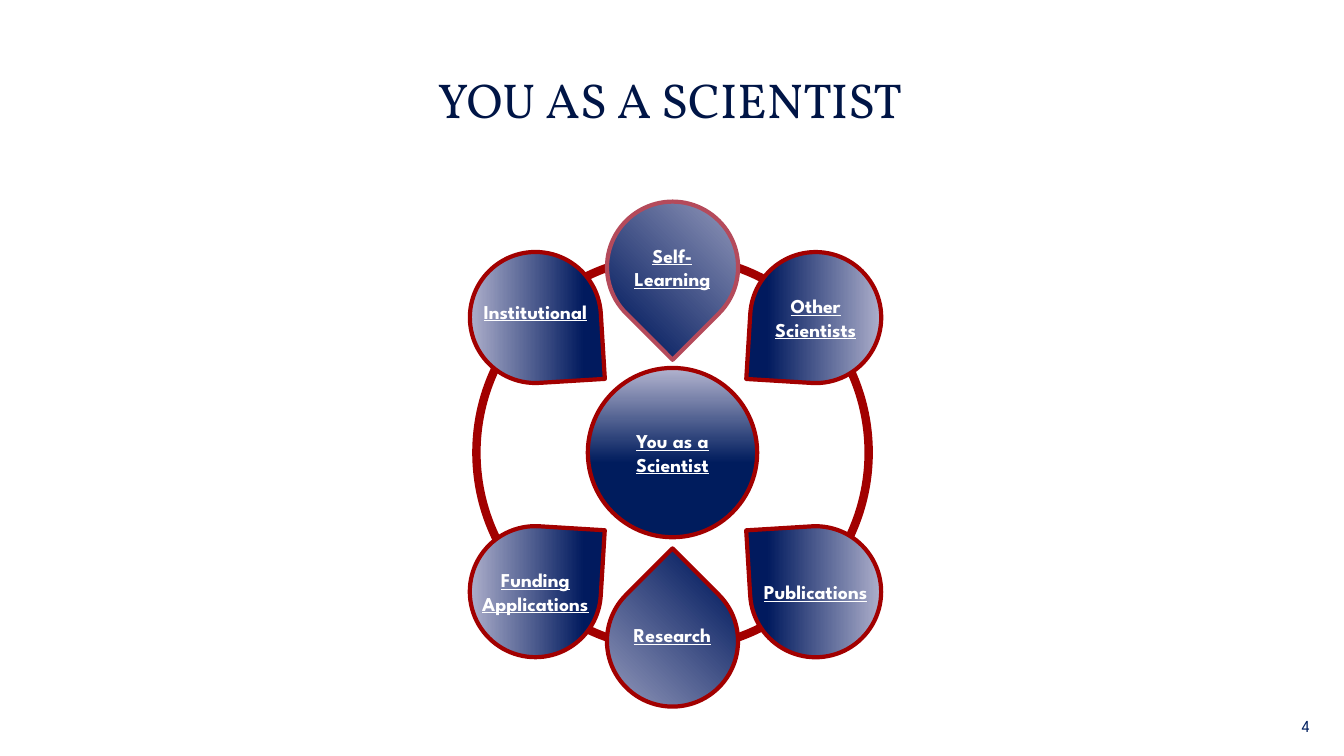
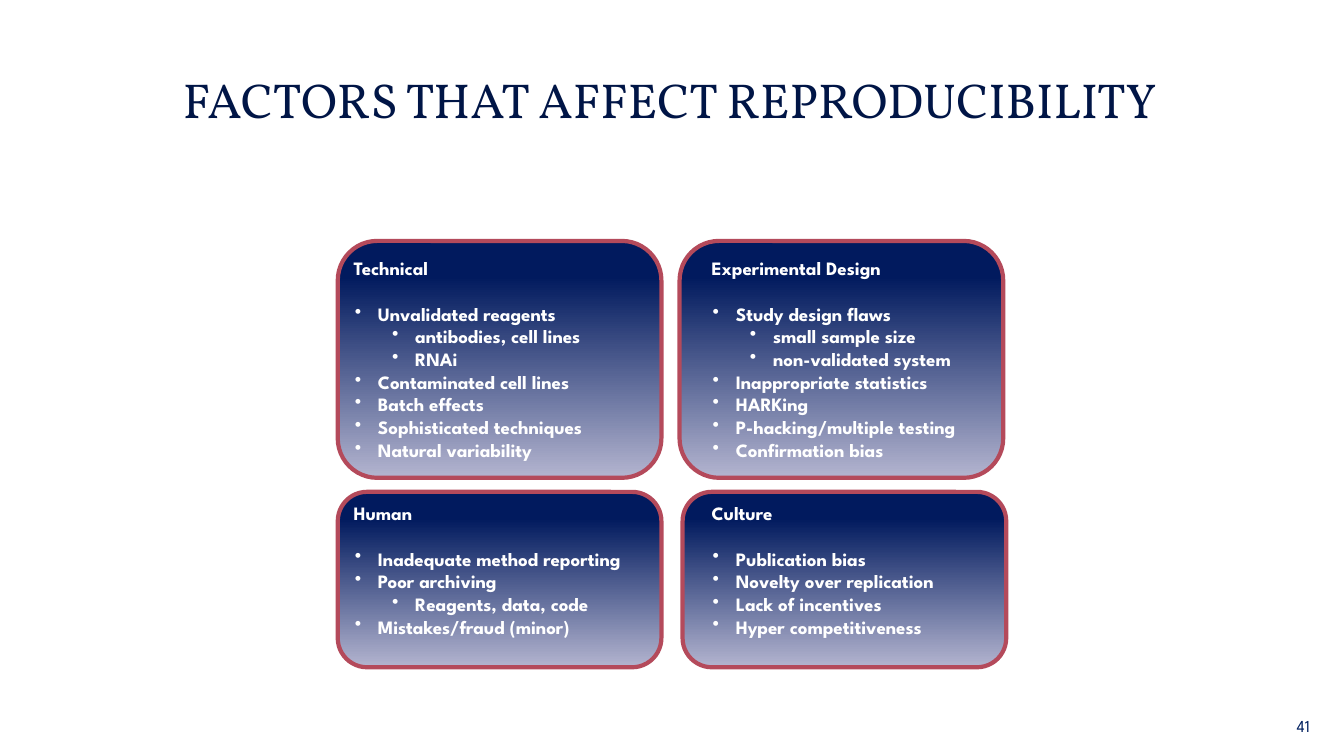
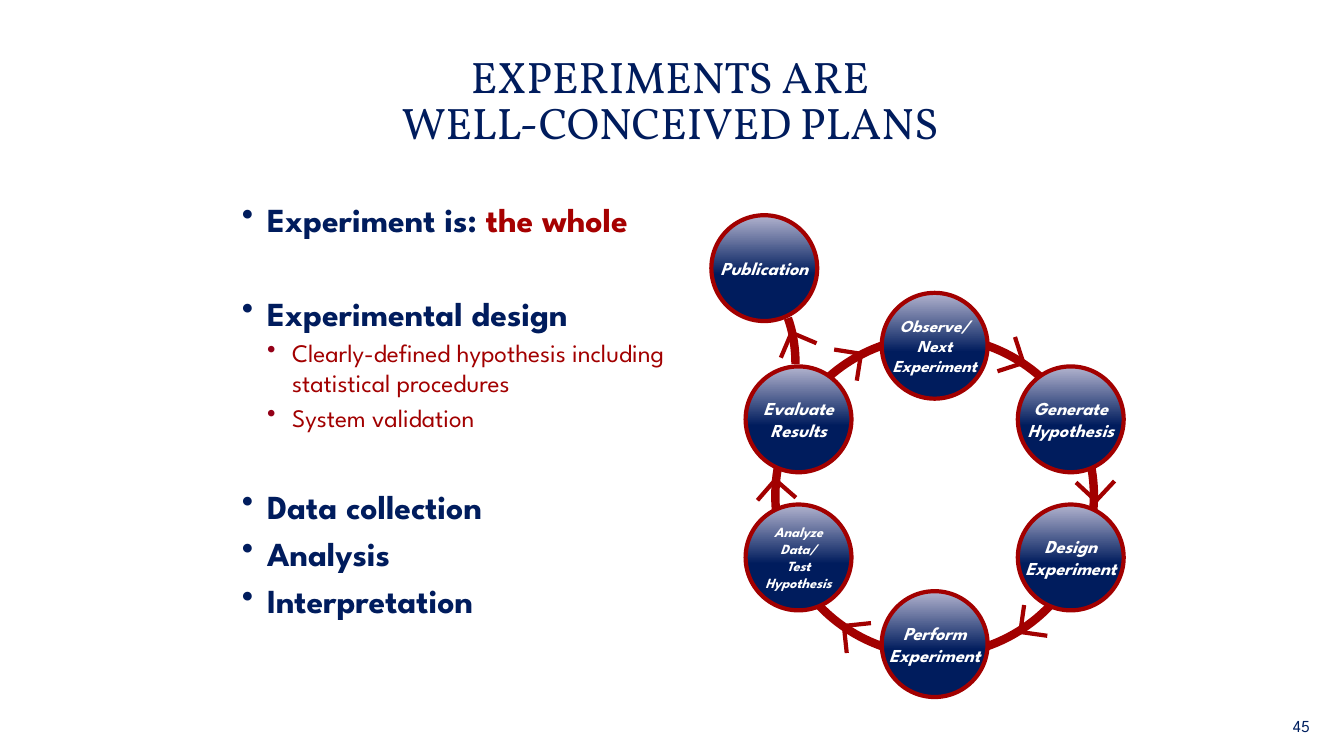
from math import cos, radians, sin

from lxml import etree
from pptx import Presentation
from pptx import util as u
from pptx.dml.color import RGBColor
from pptx.enum import shapes, text
from pptx.oxml.ns import qn

# Shared style
WIDE, HIGH = 13.33, 7.5
SANS, SERIF = "League Spartan", "Vollkorn"
WHITE = RGBColor(0xFF, 0xFF, 0xFF)
NAVY = RGBColor(0x00, 0x1C, 0x5D)
DEEP = RGBColor(0x01, 0x1A, 0x5E)
INK = RGBColor(0x00, 0x15, 0x46)
FOOT = RGBColor(0x00, 0x20, 0x60)
PALE = RGBColor(0xB3, 0xB4, 0xCF)
RED = RGBColor(0xA2, 0x00, 0x00)
BRICK = RGBColor(0xA6, 0x00, 0x00)
ROSE = RGBColor(0xB4, 0x4A, 0x5B)
WINE = RGBColor(0x94, 0x00, 0x18)
KIND = shapes.MSO_AUTO_SHAPE_TYPE
ALIGN = text.PP_ALIGN
MID = text.MSO_ANCHOR.MIDDLE

# Slide 1: label, centre, turn, gradient direction, line colour, label shift
HUB = (6.67, 4.49)
LEFT, RIGHT, UPPER, LOWER = 5.31, 8.09, 3.15, 5.87
DROPS = [
    ("Research", HUB[0], 6.36, 315, 135, RED, -0.06),
    ("Self-\nLearning", HUB[0], 2.65, 135, 315, ROSE, 0),
    ("Institutional", LEFT, UPPER, 86.5, 180, RED, -0.06),
    ("Other\nScientists", RIGHT, UPPER, 183.5, 0, RED, 0),
    ("Publications", RIGHT, LOWER, 266.5, 0, RED, 0),
    ("Funding\nApplications", LEFT, LOWER, 3.5, 180, RED, 0),
]

# Slide 2: panel left, row, text left, heading, (level, line)
ROWS = [(2.39, 2.35, 2.5), (4.88, 1.74, 4.93)]
PANELS = [
    (3.35, 1, 3.41, "Human", [
        (0, "Inadequate method reporting"), (0, "Poor archiving"),
        (1, "Reagents, data, code"), (0, "Mistakes/fraud (minor)")]),
    (6.77, 1, 6.96, "Culture", [
        (0, "Publication bias"), (0, "Novelty over replication"),
        (0, "Lack of incentives"), (0, "Hyper competitiveness")]),
    (3.35, 0, 3.41, "Technical", [
        (0, "Unvalidated reagents"), (1, "antibodies, cell lines"),
        (1, "RNAi"), (0, "Contaminated cell lines"), (0, "Batch effects"),
        (0, "Sophisticated techniques"), (0, "Natural variability")]),
    (6.74, 0, 6.96, "Experimental Design", [
        (0, "Study design flaws"), (1, "small sample size"),
        (1, "non-validated system"), (0, "Inappropriate statistics"),
        (0, "HARKing"), (0, "P-hacking/multiple testing"),
        (0, "Confirmation bias")]),
]

# Slide 3: level, space before, line (a bar starts the red part)
POINTS = [
    (0, 0, "Experiment is: |the whole"),
    (0, 38.4, "Experimental design"),
    (1, 3, "Clearly-defined hypothesis including statistical procedures"),
    (1, 3, "System validation"),
    (0, 38.4, "Data collection"),
    (0, 4.8, "Analysis"),
    (0, 4.8, "Interpretation"),
]
LOOP = (9.27, 4.92)
STEP = 1.35
NODES = [
    ("Observe/\nNext\nExperiment", LOOP[0], 3.43, 12),
    ("Perform\nExperiment", LOOP[0], 6.39, 13),
    ("Design\nExperiment", LOOP[0] + STEP, 5.53, 13),
    ("Analyze\nData/\nTest\nHypothesis", LOOP[0] - STEP, 5.53, 10),
    ("Generate\nHypothesis", LOOP[0] + STEP, 4.16, 13),
    ("Evaluate\nResults", LOOP[0] - STEP, 4.16, 13),
    ("Publication", 7.58, 2.66, 13),
]
# Arrow tips on the loop: x, y, heading in degrees clockwise
TIPS = [(10.15, 3.6, 27), (10.87, 4.97, 88), (7.69, 4.76, 266),
        (8.54, 3.51, 324), (8.37, 6.21, 219), (10.12, 6.27, 143),
        (7.85, 3.3, 248)]
ARM = 0.27


def style(par, size, color, font=SANS, bold=False, under=False, slant=False):
    for run in par.runs:
        face = run.font
        face.size, face.name, face.bold = u.Pt(size), font, bold
        face.color.rgb = color
        if under:
            face.underline = True
        if slant:
            face.italic = True


def write(slide, box, words, align, anchor=MID, wrap=True, **look):
    """Add a text box; each line of words is a paragraph."""
    frame = slide.shapes.add_textbox(*map(u.Inches, box)).text_frame
    frame.word_wrap = wrap
    frame.vertical_anchor = anchor
    frame.text = words
    for par in frame.paragraphs:
        par.alignment = align
        style(par, **look)
    return frame


def label(slide, x, y, words, size, **look):
    write(slide, (x - 0.7, y - 0.4, 1.4, 0.8), words, ALIGN.CENTER,
          wrap=False, size=size, color=WHITE, bold=True, **look)


def draw(slide, kind, box, line, width=3, grade=None):
    """Add a shape; grade is (dark colour, its place, clockwise angle)."""
    shape = slide.shapes.add_shape(kind, *map(u.Inches, box))
    shape.shadow.inherit = False
    shape.line.color.rgb = line
    shape.line.width = u.Pt(width)
    if not grade:
        shape.fill.background()
        return shape
    dark, place, angle = grade
    shape.fill.gradient()
    shape.fill.gradient_angle = -angle % 360
    first, last = shape.fill.gradient_stops
    first.color.rgb, first.position = dark, place
    last.color.rgb, last.position = PALE, 1
    shape._element.spPr.find(qn("a:gradFill")).set("rotWithShape", "0")
    return shape


def square(x, y, side):
    return x - side / 2, y - side / 2, side, side


def ball(slide, x, y, side):
    draw(slide, KIND.OVAL, square(x, y, side), RED, grade=(NAVY, 0.44, 270))


def bullet(par, left, hang, color):
    props = par._p.get_or_add_pPr()
    props.set("marL", str(u.Inches(left)))
    props.set("indent", str(-u.Inches(hang)))
    tint = etree.SubElement(props, qn("a:buClr"))
    etree.SubElement(tint, qn("a:srgbClr")).set("val", str(color))
    etree.SubElement(props, qn("a:buChar")).set("char", "•")


def stroke(slide, start, end):
    ends = [u.Inches(v) for v in (*start, *end)]
    line = slide.shapes.add_connector(shapes.MSO_CONNECTOR.STRAIGHT, *ends)
    line.line.color.rgb = RED
    line.line.width = u.Pt(3)
    etree.SubElement(line._element.spPr, qn("a:effectLst"))


def page(deck, title, number, size=35, color=INK):
    slide = deck.slides.add_slide(deck.slide_layouts[6])
    frame = write(slide, (0.62, 0.45, 12.05, 1.14), "", ALIGN.CENTER,
                  size=size, color=color)
    head = frame.paragraphs[0]
    head.text = title
    head.line_spacing = 0.87
    style(head, size, color, SERIF)
    write(slide, (10.76, 7, 2.33, 0.4), str(number), ALIGN.RIGHT,
          size=12, color=FOOT)
    return slide


def scientist(deck):
    slide = page(deck, "YOU AS A SCIENTIST", 4)
    draw(slide, KIND.OVAL, square(*HUB, 3.89), RED, 6)
    for words, x, y, turn, angle, line, shift in DROPS:
        drop = draw(slide, KIND.TEAR, square(x, y, 1.3), line,
                    grade=(DEEP, 0.15, angle))
        drop.rotation = turn
        label(slide, x, y + shift, words, 14, under=True)
    ball(slide, *HUB, 1.68)
    label(slide, *HUB, "You as a\nScientist", 14, under=True)


def factors(deck):
    slide = page(deck, "FACTORS THAT AFFECT REPRODUCIBILITY", 41)
    for left, row, inner, head, lines in PANELS:
        top, tall, start = ROWS[row]
        draw(slide, KIND.ROUNDED_RECTANGLE, (left, top, 3.21, tall), ROSE,
             grade=(DEEP, 0.15, 90))
        words = "\n".join([head] + [line for _, line in lines])
        frame = write(slide, (inner, start, 3.02, tall - 0.2), words,
                      ALIGN.LEFT, text.MSO_ANCHOR.TOP,
                      size=13.5, color=WHITE, bold=True)
        items = frame.paragraphs[1:]
        for par, (level, _) in zip(items, lines):
            bullet(par, (0.24, 0.61)[level], 0.23, WHITE)
        items[0].space_before = u.Pt(16.2)


def plans(deck):
    slide = page(deck, "EXPERIMENTS ARE\vWELL-CONCEIVED PLANS", 45, 31.5, NAVY)
    # Points on the left
    frame = write(slide, (2.17, 1.92, 4.81, 4.78), "\n".join(
        line.split("|")[0] for _, _, line in POINTS), ALIGN.LEFT,
        text.MSO_ANCHOR.TOP, size=24, color=NAVY, bold=True)
    for par, (level, gap, line) in zip(frame.paragraphs, POINTS):
        bullet(par, (0.38, 0.63)[level], 0.25, (NAVY, WINE)[level])
        if gap:
            par.space_before = u.Pt(gap)
        if level:
            style(par, 18, RED)
        for extra in line.split("|")[1:]:
            run = par.add_run()
            run.text = extra
            style(par, 24, NAVY, bold=True)
            run.font.color.rgb = BRICK
    # Loop on the right
    draw(slide, KIND.OVAL, square(*LOOP, 3.16), RED, 6)
    arc = draw(slide, KIND.ARC, (6.99, 2.79, 0.9, 1.64), RED, 6)
    arc.adjustments[0], arc.adjustments[1] = 185.74, 0
    for words, x, y, size in NODES:
        ball(slide, x, y, 1.05)
        label(slide, x, y, words, size, slant=True)
    for x, y, way in TIPS:
        for side in (135, 225):
            turn = radians(way + side)
            stroke(slide, (x + ARM * cos(turn), y + ARM * sin(turn)), (x, y))


def main():
    deck = Presentation()
    deck.slide_width, deck.slide_height = u.Inches(WIDE), u.Inches(HIGH)
    for build in (scientist, factors, plans):
        build(deck)
    deck.save("out.pptx")


if __name__ == "__main__":
    main()
